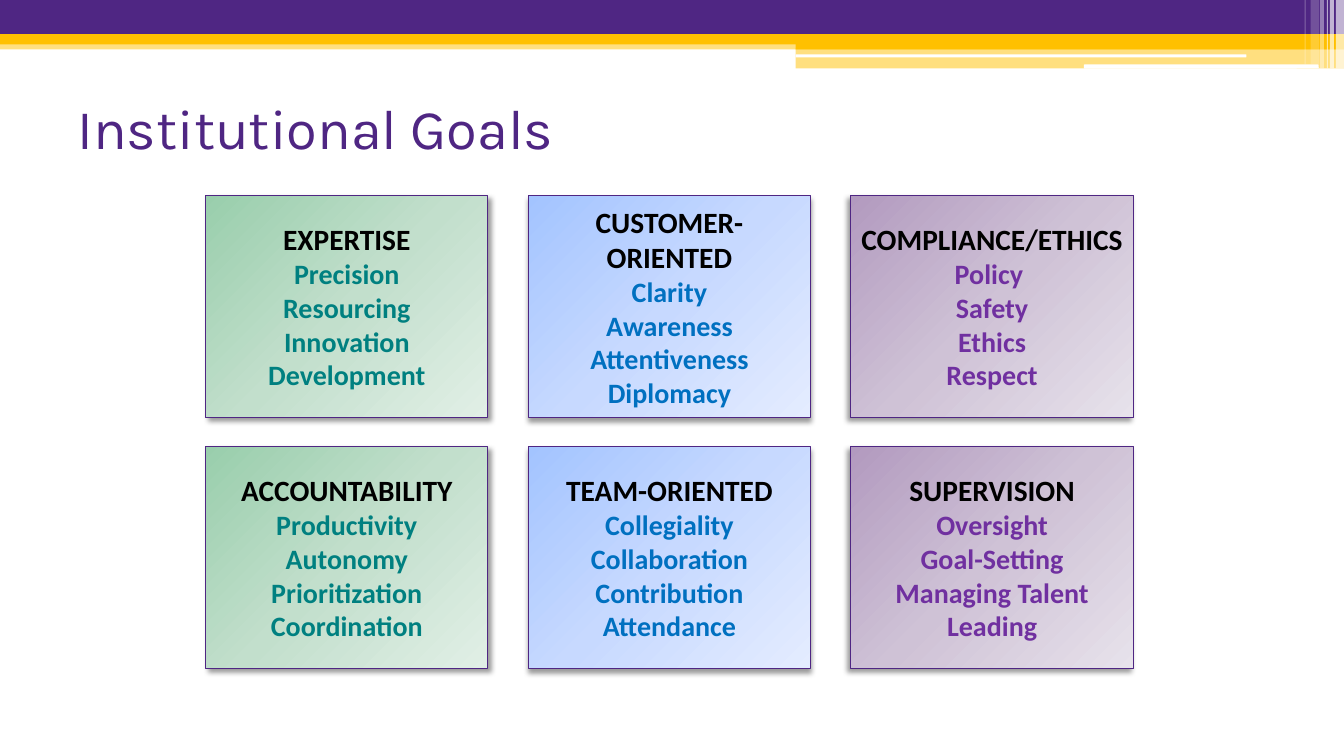
from lxml import etree
from pptx import Presentation
from pptx.dml.color import RGBColor
from pptx.enum.shapes import MSO_SHAPE
from pptx.enum.text import MSO_ANCHOR, PP_ALIGN
from pptx.oxml.ns import qn
from pptx.util import Inches, Pt

RECT, ROUND = MSO_SHAPE.RECTANGLE, MSO_SHAPE.ROUNDED_RECTANGLE
MIDDLE = MSO_ANCHOR.MIDDLE
LEFT, CENTER = PP_ALIGN.LEFT, PP_ALIGN.CENTER

SLIDE_W, SLIDE_H = 13.33, 7.5
COLORS = {
    "purple": "4F2683", "gold": "FFC000", "white": "FFFFFF", "black": "000000",
    "teal": "008080", "blue": "0070C0", "violet": "7030A0",
}

# One entry per column: word colour, gradient, shadow direction, goals
GOAL_COLUMNS = [
    ("teal", ("99CEAC", "C2DFCC", "E1EFE6"), 45, [
        ("EXPERTISE", ["Precision", "Resourcing", "Innovation", "Development"]),
        ("ACCOUNTABILITY", ["Productivity", "Autonomy", "Prioritization", "Coordination"]),
    ]),
    ("blue", ("A3C4FF", "C7D9FF", "E4ECFF"), 90, [
        ("CUSTOMER-ORIENTED", ["Clarity", "Awareness", "Attentiveness", "Diplomacy"]),
        ("TEAM-ORIENTED", ["Collegiality", "Collaboration", "Contribution", "Attendance"]),
    ]),
    ("violet", ("B29ABF", "CFC2D6", "E7E2EB"), 135, [
        ("COMPLIANCE/ETHICS", ["Policy ", "Safety", "Ethics", "Respect"]),
        ("SUPERVISION", ["Oversight", "Goal-Setting", "Managing Talent", "Leading"]),
    ]),
]


def add_color(parent, color, alpha=100):
    node = etree.SubElement(parent, qn("a:srgbClr"), val=color)
    if alpha < 100:
        etree.SubElement(node, qn("a:alpha"), val=str(alpha * 1000))


def add_box(slide, box, kind=RECT):
    shape = slide.shapes.add_shape(kind, *map(Inches, box))
    shape.shadow.inherit = False
    return shape


def add_band(slide, box, color, alpha=100, kind=RECT):
    band = add_box(slide, box, kind)
    band.line.fill.background()
    band.fill.solid()
    band.fill.fore_color.rgb = RGBColor.from_string(COLORS[color])
    if alpha < 100:
        tint = band.fill._xPr.find(".//" + qn("a:srgbClr"))
        etree.SubElement(tint, qn("a:alpha"), val=str(alpha * 1000))


def write(paragraph, text, size, color, font="Calibri", bold=False, align=CENTER):
    paragraph.alignment = align
    run = paragraph.add_run()
    run.text = text
    run.font.size = Pt(size)
    run.font.name = font
    run.font.bold = bold
    run.font.color.rgb = RGBColor.from_string(COLORS[color])


def set_gradient(shape, stops):
    shape.fill.gradient()
    shape.fill.gradient_angle = 315
    stop_list = shape._element.spPr.find(".//" + qn("a:gsLst"))
    for old_stop in list(stop_list):
        stop_list.remove(old_stop)
    for i, color in enumerate(stops):
        add_color(etree.SubElement(stop_list, qn("a:gs"), pos=str(i * 50000)), color)


def set_shadow(shape, direction):
    effects = shape._element.spPr.find(qn("a:effectLst"))
    shadow = etree.SubElement(
        effects, qn("a:outerShdw"), blurRad=str(Pt(4)), dist=str(Pt(3)),
        dir=str(direction * 60000), rotWithShape="0")
    add_color(shadow, COLORS["black"], 40)


def draw_header(slide, box):
    x, y, w, h = box
    split = x + 0.592 * w
    right = x + w

    # Full-width bands and the thicker steps on the right
    add_band(slide, (x, y + 0.4, w, 0.09), "gold", 50)
    add_band(slide, (x, y, w, 0.34), "purple")
    add_band(slide, (x, y + 0.34, w, 0.1), "gold")
    add_band(slide, (split, y + 0.39, right - split, 0.1), "gold")
    add_band(slide, (split, y + 0.48, right - split, 0.2), "gold", 50)

    # White slits
    add_band(slide, (split, y + 0.54, 4.47, 0.03), "white", kind=ROUND)
    add_band(slide, (right - 2.58, y + 0.64, 2.33, 0.04), "white", kind=ROUND)

    # Translucent stripes: distance from right edge, width, height, opacity
    for offset, width, height, alpha in [
        (0.08, 0.08, h, 65), (0.14, 0.04, h, 65), (0.17, 0.01, h, 60),
        (0.24, 0.04, h, 40), (0.33, 0.08, 0.64, 20), (0.39, 0.01, 0.64, 30),
    ]:
        add_band(slide, (right - offset, y, width, height), "white", alpha)


def draw_title(slide, box, text):
    frame = slide.shapes.add_textbox(*map(Inches, box)).text_frame
    frame.word_wrap = True
    frame.vertical_anchor = MIDDLE
    write(frame.paragraphs[0], text, 40, "purple", font="Karla", align=LEFT)


def draw_goal(slide, box, heading, values, color, stops, direction):
    card = add_box(slide, box)
    set_gradient(card, stops)
    card.line.color.rgb = RGBColor.from_string(COLORS["purple"])
    card.line.width = Pt(0.75)
    set_shadow(card, direction)
    frame = card.text_frame
    frame.word_wrap = True
    frame.vertical_anchor = MIDDLE
    write(frame.paragraphs[0], heading, 21, "black", bold=True)
    for value in values:
        write(frame.add_paragraph(), value, 20, color, bold=True)


def draw_goal_grid(slide, box, gap_x=0.4, gap_y=0.29):
    x, y, w, h = box
    columns, rows = len(GOAL_COLUMNS), len(GOAL_COLUMNS[0][3])
    card_w = (w - gap_x * (columns - 1)) / columns
    card_h = (h - gap_y * (rows - 1)) / rows
    for col, (color, stops, direction, goals) in enumerate(GOAL_COLUMNS):
        for row, (heading, values) in enumerate(goals):
            card_box = (x + col * (card_w + gap_x), y + row * (card_h + gap_y), card_w, card_h)
            draw_goal(slide, card_box, heading, values, color, stops, direction)


def main():
    prs = Presentation()
    prs.slide_width, prs.slide_height = Inches(SLIDE_W), Inches(SLIDE_H)
    slide = prs.slides.add_slide(prs.slide_layouts[6])
    draw_header(slide, (0, 0, SLIDE_W, 0.68))
    draw_title(slide, (0.67, 0.68, 12, 1.17), "Institutional Goals")
    draw_goal_grid(slide, (2.04, 1.94, 9.2, 4.69))
    prs.save("out.pptx")


if __name__ == "__main__":
    main()
